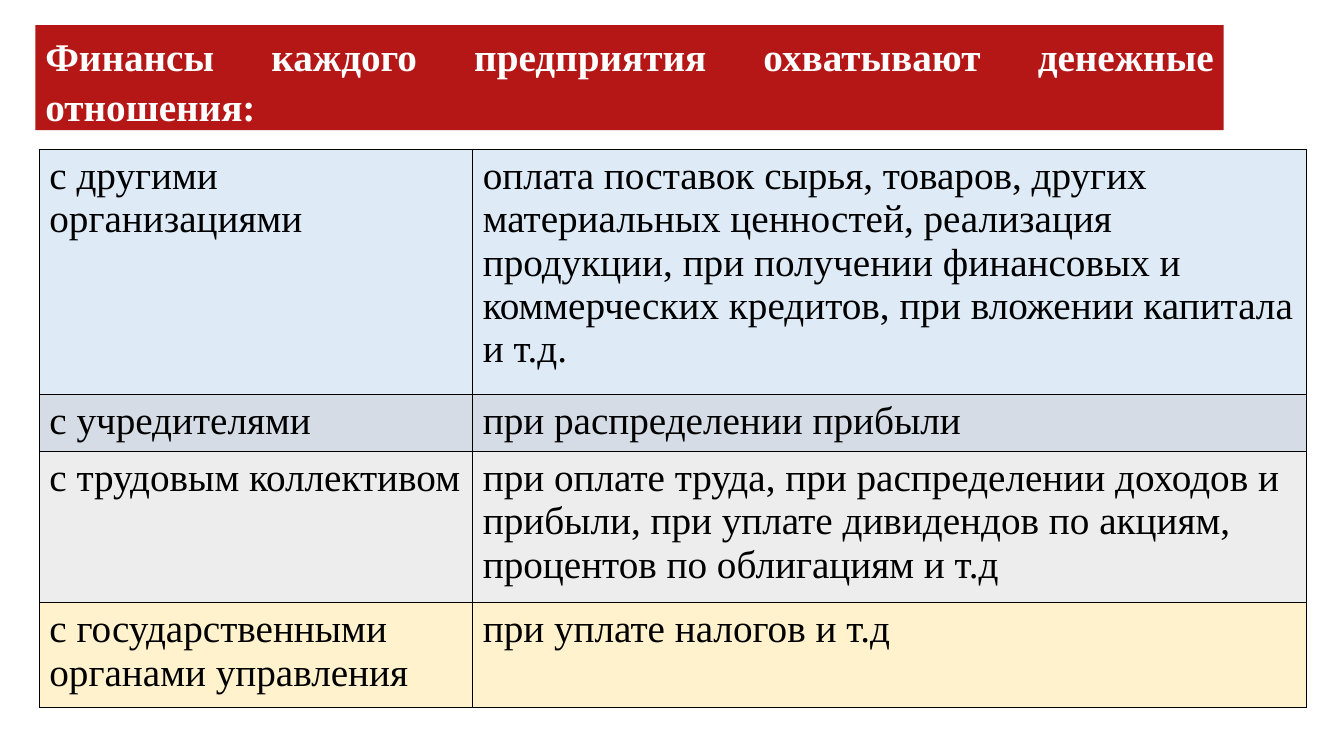
from lxml.etree import SubElement as Sub
from pptx import Presentation
from pptx.dml.color import RGBColor as Rgb
from pptx.enum.text import MSO_ANCHOR as Anchor, PP_ALIGN as Align
from pptx.oxml.ns import qn
from pptx.util import Pt

HUES = {"red": "B51717", "white": "FFFFFF", "black": "000000", "blue": "DEEBF7",
        "slate": "D6DCE5", "grey": "EDEDED", "cream": "FFF2CC"}
FONT = {"name": "Times New Roman", "size": Pt(28)}
HEAD = "Финансы каждого предприятия охватывают денежные отношения:\u00a0"
ROWS = [
    ("blue", 175, "с другими организациями",
     "оплата поставок сырья, товаров, других материальных ценностей, реализация "
     "продукции, при получении финансовых и коммерческих кредитов, при вложении "
     "капитала и т.д."),
    ("slate", 41, "с учредителями", "при распределении прибыли"),
    ("grey", 108, "с трудовым коллективом",
     "при оплате труда, при распределении доходов и прибыли, при уплате дивидендов "
     "по акциям, процентов по облигациям и т.д"),
    ("cream", 74.5, "с государственными органами управления", "при уплате налогов и т.д"),
]


def paint(item, hue):
    """Fill a shape or cell with a solid colour."""
    item.fill.solid()
    item.fill.fore_color.rgb = Rgb.from_string(HUES[hue])


def style(para, hue, bold=False):
    """Set the font of a paragraph."""
    for key, val in {**FONT, "bold": bold}.items():
        setattr(para.font, key, val)
    para.font.color.rgb = Rgb.from_string(HUES[hue])


def edge(cell):
    """Draw thin black borders round a cell."""
    props = cell._tc.get_or_add_tcPr()
    for spot, side in enumerate(("lnL", "lnR", "lnT", "lnB")):
        line = props.makeelement(qn(f"a:{side}"), {"w": str(Pt(1))})
        fill = Sub(line, qn("a:solidFill"))
        Sub(fill, qn("a:srgbClr"), val=HUES["black"])
        props.insert(spot, line)


def banner(slide, left, top, width, height):
    """Place the title on its red band."""
    title = slide.shapes.title
    box = {"left": left, "top": top, "width": width, "height": height}
    for key, val in box.items():
        setattr(title, key, Pt(val))
    paint(title, "red")
    frame = title.text_frame
    frame.text = HEAD
    frame.word_wrap = True
    frame.vertical_anchor = Anchor.TOP
    para = frame.paragraphs[0]
    para.alignment = Align.JUSTIFY
    para.line_spacing = 1.05
    style(para, "white", True)


def grid(slide, left, top, width, height):
    """Place the table of money relations."""
    box = (Pt(val) for val in (left, top, width, height))
    table = slide.shapes.add_table(len(ROWS), 2, *box).table
    table.first_row = table.horz_banding = False
    first = 309.6
    for col, size in zip(table.columns, (first, width - first)):
        col.width = Pt(size)
    for row, (hue, size, *texts) in zip(table.rows, ROWS):
        row.height = Pt(size)
        for cell, text in zip(row.cells, texts):
            cell.text = text
            style(cell.text_frame.paragraphs[0], "black")
            paint(cell, hue)
            edge(cell)


def main():
    """Build and save the slide."""
    deck = Presentation()
    deck.slide_width, deck.slide_height = Pt(960), Pt(540)
    slide = deck.slides.add_slide(deck.slide_layouts[5])
    banner(slide, 25.2, 18, 848.9, 75)
    grid(slide, 28.1, 106.6, 905, sum(row[1] for row in ROWS))
    deck.save("out.pptx")


if __name__ == "__main__":
    main()
